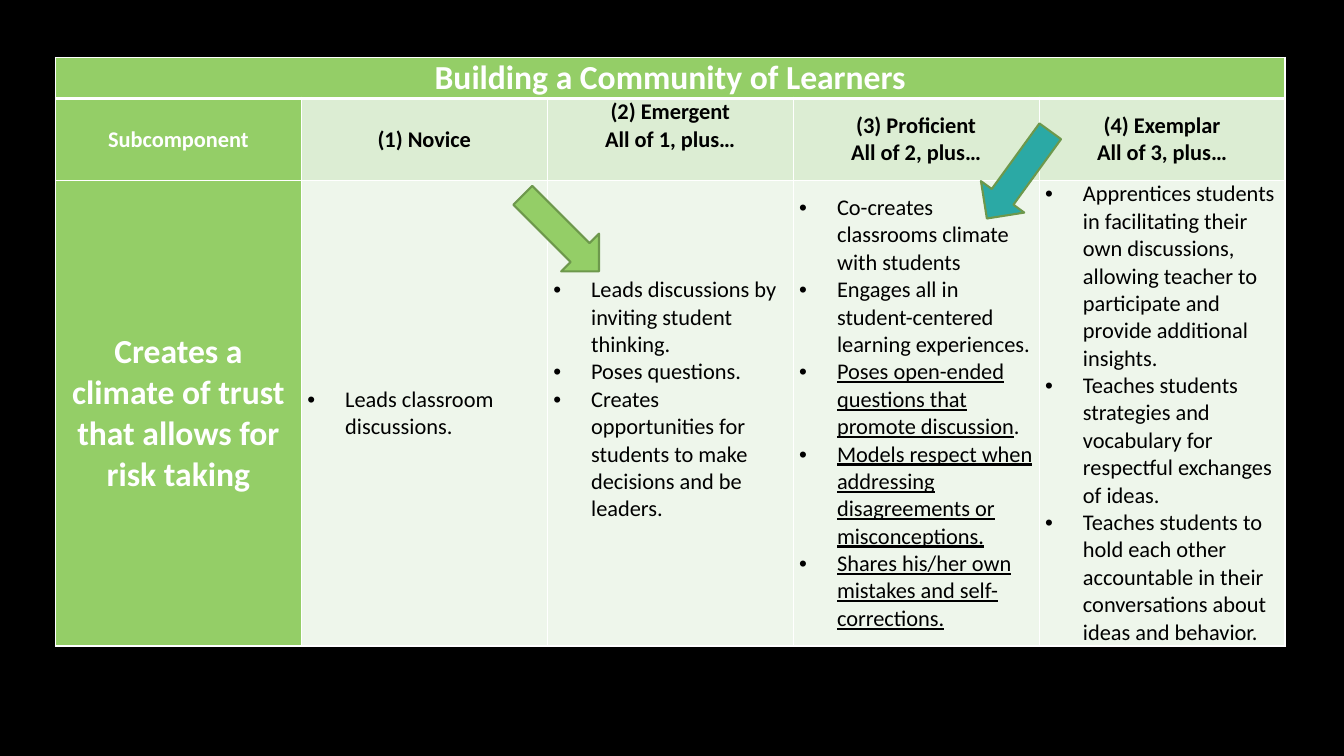
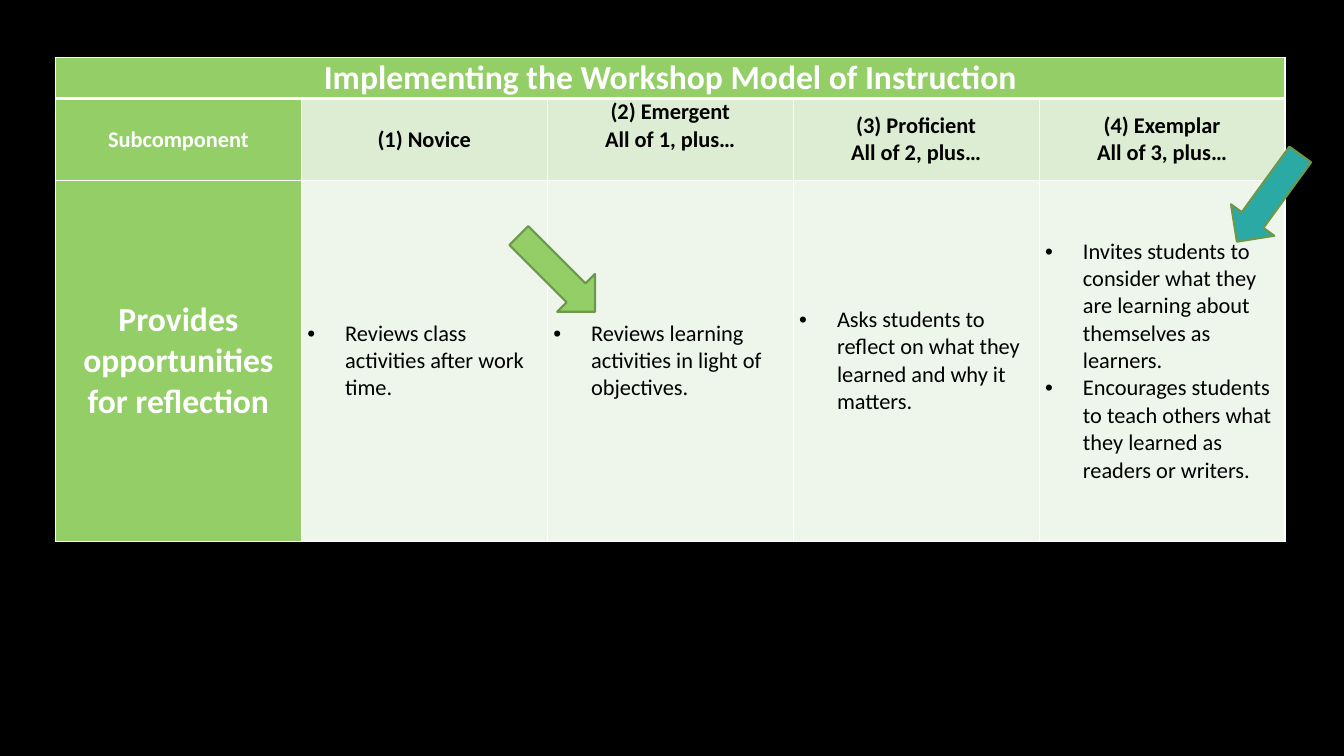
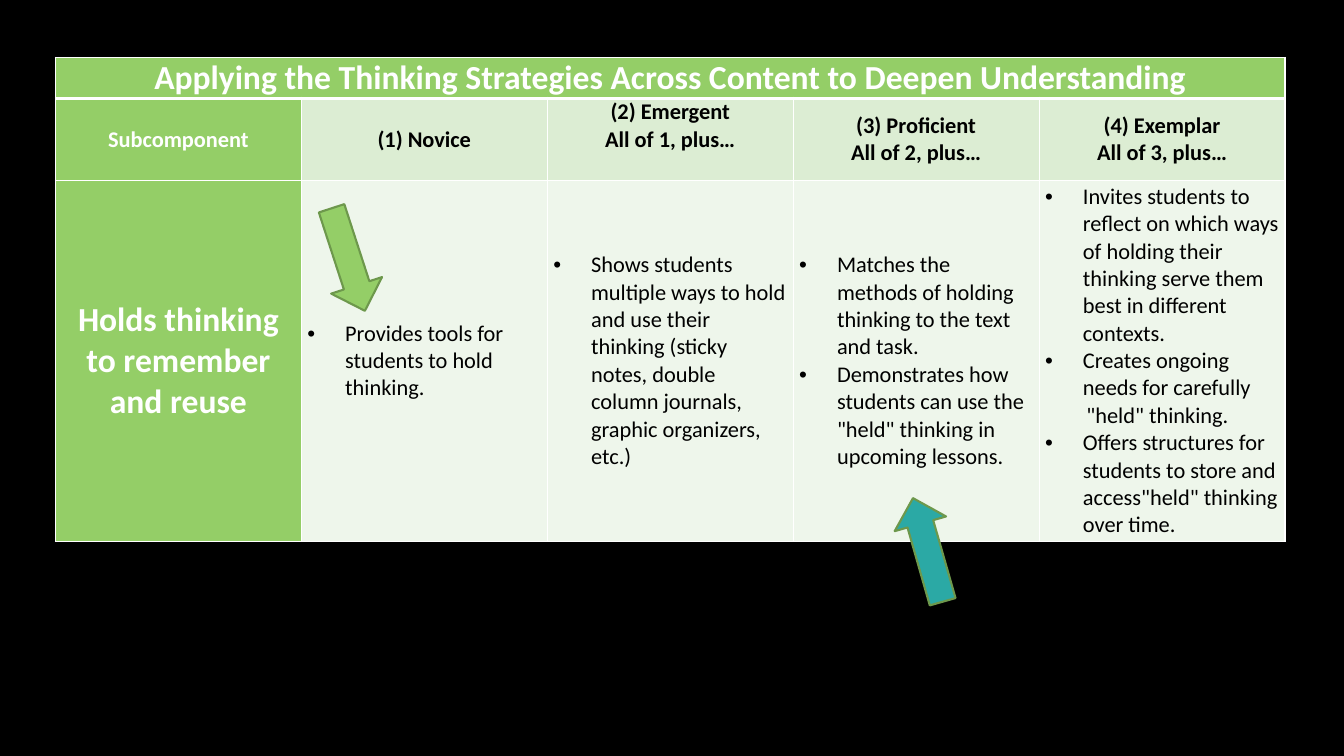
from lxml import etree
from pptx import Presentation
from pptx.dml.color import RGBColor
from pptx.enum.shapes import MSO_SHAPE
from pptx.enum.text import MSO_ANCHOR, PP_ALIGN
from pptx.oxml.ns import qn
from pptx.util import Pt

ARROW = MSO_SHAPE.RIGHT_ARROW
MIDDLE = MSO_ANCHOR.MIDDLE
CENTER, LEFT = PP_ALIGN.CENTER, PP_ALIGN.LEFT

COLORS = {
    "background": "000000", "text": "000000", "white": "FFFFFF",
    "green": "94CE67", "level": "DCEDD3", "body": "EEF6EB",
    "teal": "2BA9A5", "arrow_line": "6D984C",
}
FONT = "Calibri"

# Content: a tuple item is (underlined part, plain part)
LEVELS = [
    ["Subcomponent"],
    ["(1) Novice"],
    ["(2) Emergent", "All of 1, plus…"],
    ["(3) Proficient", "All of 2, plus…"],
    ["(4) Exemplar", "All of 3, plus…"],
]
HELD_LINE = "\"held\" thinking."  # continues the item above it, without a bullet
RUBRICS = [
    {
        "title": "Building a Community of Learners",
        "subcomponent": "Creates a climate of trust that allows for risk taking",
        "practices": [
            ["Leads classroom discussions."],
            ["Leads discussions by inviting student thinking.",
             "Poses questions.",
             "Creates opportunities for students to make decisions and be leaders."],
            ["Co-creates classrooms climate with students",
             "Engages all in student-centered learning experiences.",
             ("Poses open-ended questions that promote discussion", "."),
             ("Models respect when addressing disagreements or misconceptions.", ""),
             ("Shares his/her own mistakes and self-corrections.", "")],
            ["Apprentices students in facilitating their own discussions, allowing "
             "teacher to participate and provide additional insights.",
             "Teaches students strategies and vocabulary for respectful exchanges of ideas.",
             "Teaches students to hold each other accountable in their conversations "
             "about ideas and behavior."],
        ],
        "body_height": 332,
        "raised": [2],
        "arrows": [(362.16, 147.6, 45, "green"), (689.04, 105.84, 126, "teal")],
    },
    {
        "title": "Implementing the Workshop Model of Instruction",
        "subcomponent": "Provides opportunities for reflection",
        "practices": [
            ["Reviews class activities after work time."],
            ["Reviews learning activities in light of objectives."],
            ["Asks students to reflect on what they learned and why it matters."],
            ["Invites students to consider what they are learning about themselves as learners.",
             "Encourages students to teach others what they learned as readers or writers."],
        ],
        "body_height": 257.8,
        "raised": [],
        "arrows": [(359.28, 176.4, 45, "green"), (867.6, 122.4, 126, "teal")],
    },
    {
        "title": "Applying the Thinking Strategies Across Content to Deepen Understanding",
        "subcomponent": "Holds thinking to remember and reuse",
        "practices": [
            ["Provides tools for students to hold thinking."],
            ["Shows students multiple ways to hold and use their thinking (sticky notes, "
             "double column journals, graphic organizers, etc.)"],
            ["Matches the methods of holding thinking to the text and task.",
             "Demonstrates how students can use the \"held\" thinking in upcoming lessons."],
            ["Invites students to reflect on which ways of holding their thinking serve "
             "them best in different contexts.",
             "Creates ongoing needs for carefully",
             HELD_LINE,
             "Offers structures for students to store and access\"held\" thinking over time."],
        ],
        "body_height": 257.8,
        "raised": [],
        "arrows": [(210.24, 166.32, 72, "green"), (624.24, 373.68, 254, "teal")],
    },
]

# Layout in points
SLIDE_W, SLIDE_H = 960, 540
TABLE_LEFT, TABLE_TOP, COLUMN_W = 39.6, 41, 175.68
TITLE_H, LEVEL_H = 29.3, 58.6
INSET, RAISE = 4.32, 19.5
INDENT, HELD_INDENT = 27, 29.5
ARROW_W, ARROW_H = 77, 38.2

HEADING = {"size": Pt(24), "bold": True, "color": "white"}
LABEL = {"size": Pt(16), "bold": True, "color": "white"}
LEVEL = {**LABEL, "color": "text"}
PRACTICE = {"size": Pt(16), "bold": False, "color": "text"}


def rgb(name):
    return RGBColor.from_string(COLORS[name])


def format_font(font, style):
    font.name = FONT
    for key, value in style.items():
        if key == "color":
            font.color.rgb = rgb(value)
        else:
            setattr(font, key, value)


def add_borders(cell, row):
    """Thin white rules, with a thick one under the title row."""
    widths = {"lnL": 1, "lnR": 1, "lnT": 3 if row == 1 else 1, "lnB": 3 if row == 0 else 1}
    for side, width in widths.items():
        line = etree.SubElement(cell._tc.get_or_add_tcPr(), qn("a:" + side), w=str(Pt(width)))
        fill = etree.SubElement(line, qn("a:solidFill"))
        etree.SubElement(fill, qn("a:srgbClr"), val=COLORS["white"])


def set_indent(paragraph, item):
    props = paragraph._p.get_or_add_pPr()
    bulleted = item != HELD_LINE
    props.set("marL", str(Pt(INDENT if bulleted else HELD_INDENT)))
    props.set("indent", str(Pt(-INDENT if bulleted else 0)))
    if bulleted:
        etree.SubElement(props, qn("a:buFont"), typeface="Arial")
        etree.SubElement(props, qn("a:buChar"), char="•")
    else:
        etree.SubElement(props, qn("a:buNone"))


def fill_cell(cell, items, style, fill, bulleted=False, raised=False):
    cell.fill.solid()
    cell.fill.fore_color.rgb = rgb(fill)
    cell.vertical_anchor = MIDDLE
    cell.margin_bottom = Pt(RAISE if raised else 0)
    for index, item in enumerate(items):
        frame = cell.text_frame
        paragraph = frame.paragraphs[0] if index == 0 else frame.add_paragraph()
        paragraph.alignment = LEFT if bulleted else CENTER
        if bulleted:
            set_indent(paragraph, item)
        underlined, plain = item if isinstance(item, tuple) else ("", item)
        for text, underline in ((underlined, True), (plain, False)):
            if text:
                run = paragraph.add_run()
                run.text = text
                format_font(run.font, {**style, "underline": underline})


def add_rubric(slide, rubric):
    heights = [TITLE_H, LEVEL_H, rubric["body_height"]]
    columns = len(LEVELS)
    table = slide.shapes.add_table(
        len(heights), columns, Pt(TABLE_LEFT), Pt(TABLE_TOP),
        Pt(COLUMN_W * columns), Pt(sum(heights))).table
    table.horz_banding = False
    for column in table.columns:
        column.width = Pt(COLUMN_W)
    for index, height in enumerate(heights):
        table.rows[index].height = Pt(height)
        for cell in table.rows[index].cells:
            cell.margin_left = cell.margin_right = Pt(INSET)
            cell.margin_top = cell.margin_bottom = 0
            add_borders(cell, index)

    # Title row and level names
    table.cell(0, 0).merge(table.cell(0, columns - 1))
    fill_cell(table.cell(0, 0), [rubric["title"]], HEADING, "green")
    for index, names in enumerate(LEVELS):
        style, fill = (LEVEL, "level") if index else (LABEL, "green")
        fill_cell(table.cell(1, index), names, style, fill, raised=index == 2)

    # Subcomponent and its practices
    fill_cell(table.cell(2, 0), [rubric["subcomponent"]], HEADING, "green")
    for index, practices in enumerate(rubric["practices"], 1):
        fill_cell(table.cell(2, index), practices, PRACTICE, "body",
                  bulleted=True, raised=index in rubric["raised"])


def add_arrow(slide, left, top, rotation, color):
    arrow = slide.shapes.add_shape(ARROW, Pt(left), Pt(top), Pt(ARROW_W), Pt(ARROW_H))
    arrow.rotation = rotation
    arrow.shadow.inherit = False
    arrow.fill.solid()
    arrow.fill.fore_color.rgb = rgb(color)
    arrow.line.color.rgb = rgb("arrow_line")
    arrow.line.width = Pt(1.5)


def main():
    deck = Presentation()
    deck.slide_width, deck.slide_height = Pt(SLIDE_W), Pt(SLIDE_H)
    background = deck.slide_master.background.fill
    background.solid()
    background.fore_color.rgb = rgb("background")
    blank = deck.slide_layouts[6]
    for rubric in RUBRICS:
        slide = deck.slides.add_slide(blank)
        add_rubric(slide, rubric)
        for arrow in rubric["arrows"]:
            add_arrow(slide, *arrow)
    deck.save("out.pptx")


if __name__ == "__main__":
    main()
